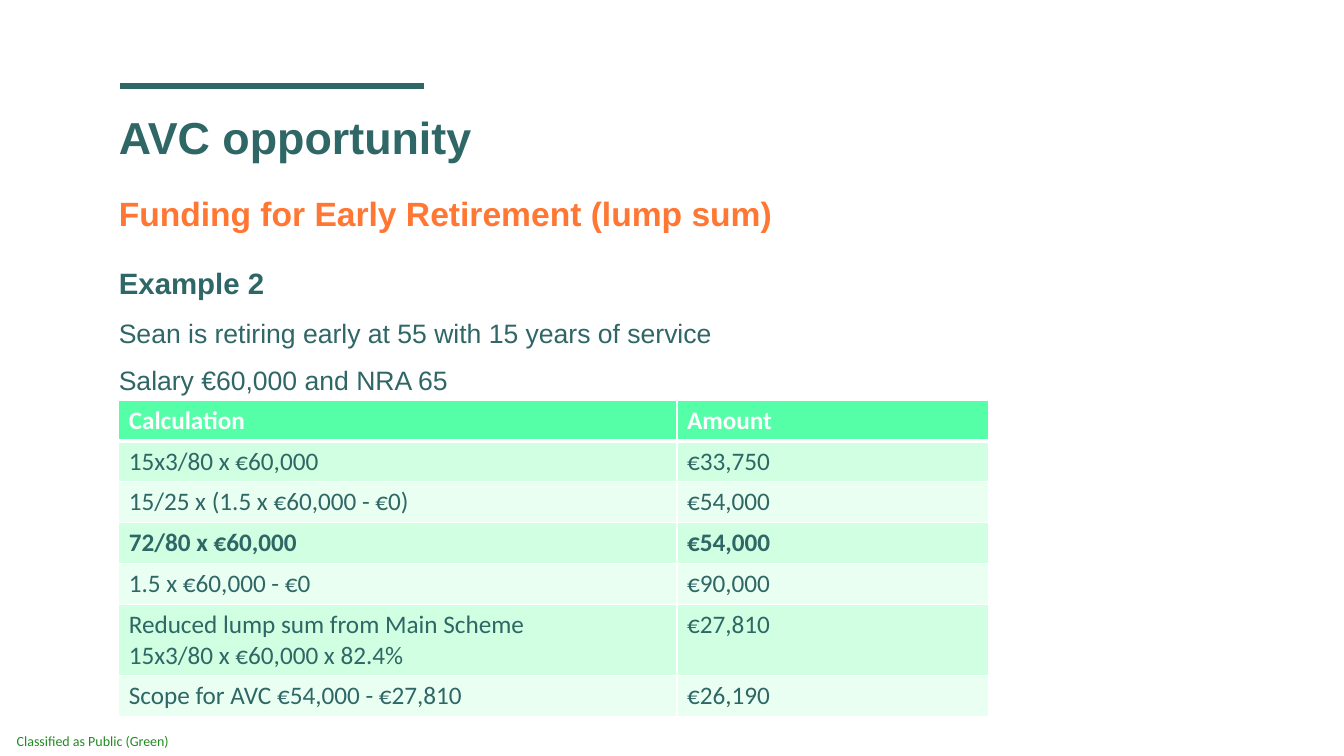
from dataclasses import dataclass

from lxml import etree
from pptx import Presentation
from pptx.dml.color import RGBColor
from pptx.enum.shapes import MSO_CONNECTOR
from pptx.enum.text import MSO_ANCHOR
from pptx.oxml.ns import qn
from pptx.util import Pt

STRAIGHT = MSO_CONNECTOR.STRAIGHT
TOP, MIDDLE = MSO_ANCHOR.TOP, MSO_ANCHOR.MIDDLE


@dataclass(frozen=True)
class Theme:
    teal: str = "2F6666"
    orange: str = "FF7733"
    green: str = "228B22"
    white: str = "FFFFFF"
    header_fill: str = "54FFA8"
    bands: tuple = ("D1FFE1", "E9FFF1")
    heading_font: str = "Arial"
    table_font: str = "Calibri"
    title: float = 32
    subtitle: float = 24
    example: float = 21
    body: float = 19
    table: float = 18
    footer: float = 10


T = Theme()

ROWS = [
    ("Calculation", "Amount"),
    ("15x3/80 x €60,000", "€33,750"),
    ("15/25 x (1.5 x €60,000 - €0)", "€54,000"),
    ("72/80 x €60,000", "€54,000"),
    ("1.5 x €60,000 - €0", "€90,000"),
    ("Reduced lump sum from Main Scheme\n15x3/80 x €60,000 x 82.4%", "€27,810"),
    ("Scope for AVC €54,000 - €27,810", "€26,190"),
]
BOLD_ROWS = (0, 3)
COLUMN_WIDTHS = (398.8, 222.4)
ROW_HEIGHT, EXTRA_LINE = 29.2, 21.6


def add_run(p, text, size, color, font, bold=False):
    r = p.add_run()
    r.text = text
    r.font.size = Pt(size)
    r.font.name = font
    r.font.bold = bold
    r.font.color.rgb = RGBColor.from_string(color)


def add_text_box(s, left, top, width, height, anchor=TOP):
    tf = s.shapes.add_textbox(Pt(left), Pt(top), Pt(width), Pt(height)).text_frame
    tf.word_wrap = True
    tf.vertical_anchor = anchor
    return tf


def add_rule(s, left, top, width, weight):
    line = s.shapes.add_connector(STRAIGHT, Pt(left), Pt(top), Pt(left + width), Pt(top))
    line.line.color.rgb = RGBColor.from_string(T.teal)
    line.line.width = Pt(weight)
    etree.SubElement(line._element.spPr, qn("a:effectLst"))


def add_paragraphs(tf, items):
    for i, (text, size, color, bold, space_before) in enumerate(items):
        p = tf.paragraphs[0] if i == 0 else tf.add_paragraph()
        p.space_before = Pt(space_before)
        add_run(p, text, size, color, T.heading_font, bold)


def set_borders(cell, **weights):
    """Draw white borders; they must come before the fill."""
    tc_pr = cell._tc.get_or_add_tcPr()
    for i, side in enumerate("LRTB"):
        ln = etree.Element(qn(f"a:ln{side}"), w=str(Pt(weights.get(side, 1))))
        fill = etree.SubElement(ln, qn("a:solidFill"))
        etree.SubElement(fill, qn("a:srgbClr"), val=T.white)
        tc_pr.insert(i, ln)


def fill_cell(cell, text, row):
    header = row == 0
    color = T.header_fill if header else T.bands[(row - 1) % 2]
    cell.fill.solid()
    cell.fill.fore_color.rgb = RGBColor.from_string(color)
    set_borders(cell, T=3 if row == 1 else 1, B=3 if header else 1)
    tf = cell.text_frame
    for i, line in enumerate(text.split("\n")):
        p = tf.paragraphs[0] if i == 0 else tf.add_paragraph()
        add_run(p, line, T.table, T.white if header else T.teal,
                T.table_font, row in BOLD_ROWS)


def add_calculation_table(s, left, top):
    heights = [ROW_HEIGHT + EXTRA_LINE * row[0].count("\n") for row in ROWS]
    table = s.shapes.add_table(len(ROWS), len(COLUMN_WIDTHS), Pt(left), Pt(top),
                               Pt(sum(COLUMN_WIDTHS)), Pt(sum(heights))).table
    for column, width in zip(table.columns, COLUMN_WIDTHS):
        column.width = Pt(width)
    for i, (texts, height) in enumerate(zip(ROWS, heights)):
        table.rows[i].height = Pt(height)
        for j, text in enumerate(texts):
            fill_cell(table.cell(i, j), text, i)


def main():
    prs = Presentation()
    prs.slide_width, prs.slide_height = Pt(960), Pt(540)
    s = prs.slides.add_slide(prs.slide_layouts[6])

    # Classification label
    tf = add_text_box(s, 0, 519, 133, 21, MIDDLE)
    tf.margin_left = Pt(12)
    tf.margin_top = tf.margin_right = tf.margin_bottom = 0
    add_run(tf.paragraphs[0], "Classified as Public (Green)", T.footer, T.green, T.table_font)

    # Title with its rule
    add_rule(s, 85.7, 61.2, 217.4, 4.5)
    tf = add_text_box(s, 77.8, 79, 828, 56)
    tf.paragraphs[0].line_spacing = 0.9
    add_run(tf.paragraphs[0], "AVC opportunity", T.title, T.teal, T.heading_font, True)

    # Example description
    add_paragraphs(add_text_box(s, 77.8, 134, 772.6, 150), [
        ("Funding for Early Retirement (lump sum)", T.subtitle, T.orange, True, 0),
        ("Example 2", T.example, T.teal, True, 23),
        ("Sean is retiring early at 55 with 15 years of service", T.body, T.teal, False, 12),
        ("Salary €60,000 and NRA 65", T.body, T.teal, False, 11),
    ])

    # Lump sum calculation
    add_calculation_table(s, 84.8, 285.8)

    prs.save("out.pptx")


if __name__ == "__main__":
    main()
